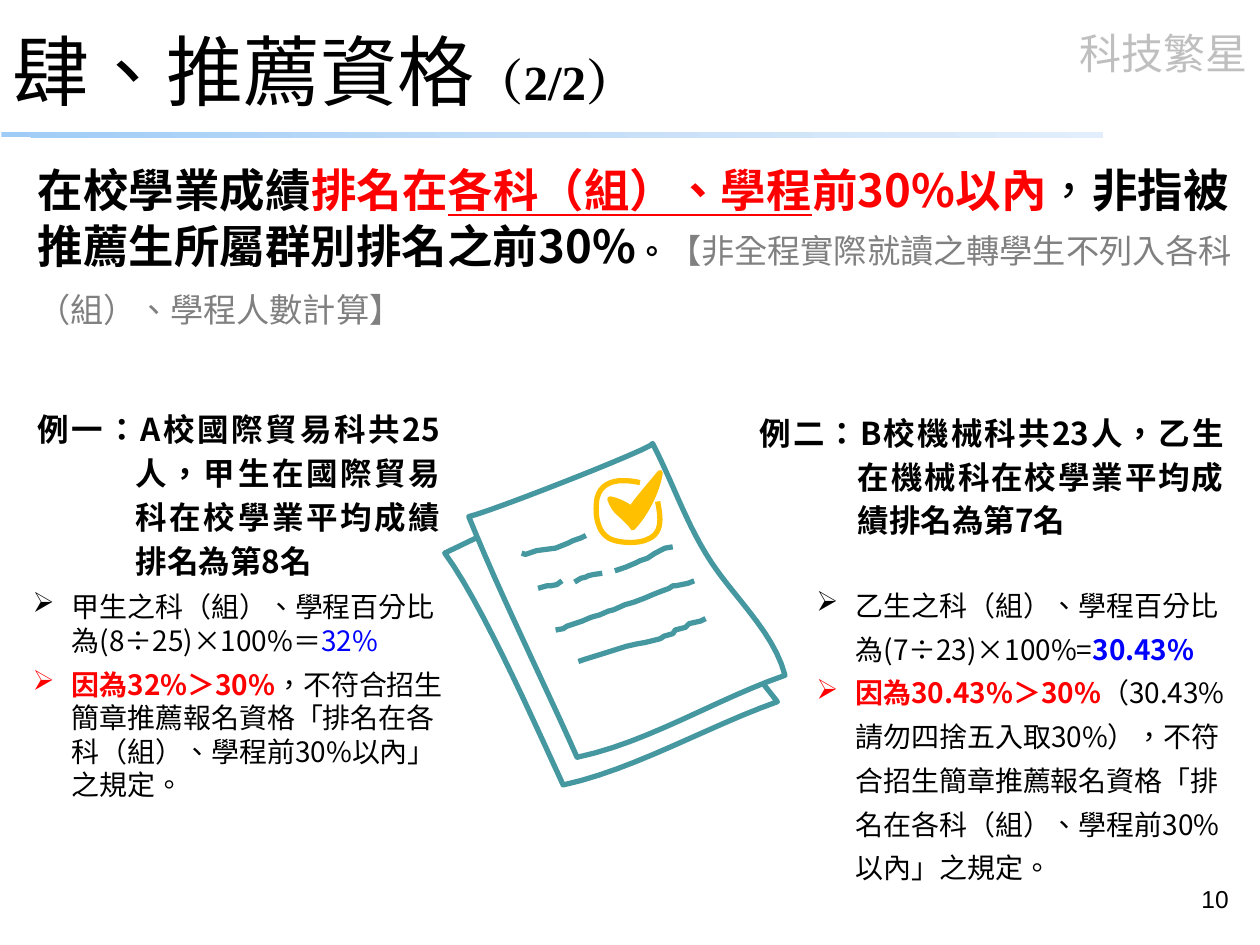
from copy import deepcopy
from itertools import chain

from lxml import etree
from pptx import Presentation
from pptx import util as u
from pptx.dml.color import RGBColor
from pptx.enum import shapes, text
from pptx.oxml.ns import qn

COLORS = {
    "black": "000000", "red": "FF0000", "blue": "0000FF", "gray": "808080",
    "pale": "BFBFBF", "teal": "4597A0", "gold": "FFC000",
    "rule_start": "9FCCF6", "rule_middle": "C4DEF8", "rule_end": "E2EEFB",
}
SANS = "Noto Sans CJK SC"
HEADING = "Noto Sans CJK JP"

# Sheet outlines and tick: a start point, then three points per Bézier curve.
# All drawing points are in hundredths of an inch from the drawing's corner.
FRONT_SHEET = [
    (168, 2), (170, 5), (37, 57), (22, 60), (48, 124), (80, 188), (108, 251),
    (165, 239), (218, 205), (273, 186), (264, 150), (228, 120), (210, 89),
    (193, 61), (183, 31), (168, 2)]
BACK_SHEET = [
    (28, 77), (28, 77), (3, 89), (3, 89), (31, 127), (68, 210), (97, 273),
    (153, 261), (213, 226), (267, 207), (267, 207), (256, 193), (256, 193)]
CHECK_BOX = [
    (158, 33), (144, 30), (128, 30), (124, 45), (122, 55), (123, 71), (133, 77),
    (140, 81), (156, 82), (164, 78), (177, 73), (174, 59), (172, 48)]
TICK = [
    (174, 25), (175, 24), (150, 53), (151, 54), (147, 50), (139, 47), (134, 46),
    (136, 51), (138, 55), (142, 58), (143, 59), (153, 68), (152, 69),
    (162, 59), (172, 40), (174, 25)]
WRITING = [
    [(64, 89), (67, 90), (76, 87), (91, 85), (101, 81), (105, 79), (111, 77), (115, 75)],
    [(77, 117), (84, 115), (87, 115), (92, 114), (96, 111)],
    [(106, 112), (111, 109), (115, 108), (117, 107), (121, 106), (128, 105)],
    [(138, 103), (147, 100), (154, 97), (158, 95), (164, 93), (170, 89), (176, 86),
     (178, 85), (184, 84)],
    [(91, 150), (97, 149), (100, 147), (106, 145), (112, 143), (119, 140), (126, 138),
     (133, 135), (137, 134), (146, 130), (153, 128), (161, 125), (168, 122),
     (173, 120), (181, 117), (184, 115), (186, 115), (196, 113), (201, 111)],
    [(109, 175), (115, 173), (128, 169), (147, 163), (156, 161), (162, 160), (174, 157),
     (177, 155), (184, 153), (186, 150), (194, 148), (197, 145), (206, 143), (210, 141)],
]


def rgb(name):
    return RGBColor.from_string(COLORS[name])


def add_runs(paragraph, runs, font=SANS, size=16):
    """Add (text, style) runs; style may hold color, bold, underline, size, font."""
    for words, style in runs:
        run = paragraph.add_run()
        run.text = words
        name = style.get("font", font)
        run.font.name = name
        run.font.size = u.Pt(style.get("size", size))
        run.font.bold = style.get("bold", False)
        run.font.underline = style.get("underline", False)
        run.font.color.rgb = rgb(style.get("color", "black"))
        properties = run._r.get_or_add_rPr()
        properties.set("lang", "zh-TW")
        properties.find(qn("a:latin")).addnext(
            etree.Element(qn("a:ea"), typeface=name))


def add_text_frame(slide, box, grow=True):
    frame = slide.shapes.add_textbox(*map(u.Cm, box)).text_frame
    frame.word_wrap = True
    if grow:
        frame.auto_size = text.MSO_AUTO_SIZE.SHAPE_TO_FIT_TEXT
    return frame


def hang(paragraph, indent):
    properties = paragraph._p.get_or_add_pPr()
    properties.set("marL", str(u.Cm(indent)))
    properties.set("indent", str(-u.Cm(indent)))
    return properties


def add_header(slide, box):
    """Title, section label and the fading rule below them."""
    left, top, width, height = box
    rule = slide.shapes.add_shape(shapes.MSO_SHAPE.RECTANGLE, u.Cm(left + 0.03),
                                  u.Cm(top + height - 0.1), u.Cm(22.2), u.Cm(0.1))
    rule.shadow.inherit = False
    rule.line.fill.background()
    rule.fill.gradient()
    rule.fill.gradient_angle = 45
    first = rule._element.spPr.find(".//" + qn("a:gs"))
    first.addnext(deepcopy(first))
    for stop, (name, position) in zip(rule.fill.gradient_stops, (
            ("rule_start", 0), ("rule_middle", 0.5), ("rule_end", 1))):
        stop.color.rgb = rgb(name)
        stop.position = position

    label = add_text_frame(slide, (left + width - 4.5, top + 0.43, 4.5, 1.27))
    label.paragraphs[0].alignment = text.PP_ALIGN.RIGHT
    add_runs(label.paragraphs[0], [("科技繁星", {"color": "pale"})], HEADING, 24)

    title = add_text_frame(slide, (left, top + 0.53, 22.86, 1.75), grow=False)
    title.vertical_anchor = text.MSO_ANCHOR.MIDDLE
    add_runs(title.paragraphs[0], [
        ("肆、推薦資格", {}),
        ("（2/2）", {"font": "Times New Roman", "size": 28, "bold": True})], HEADING, 44)


def add_rule_text(slide, box, runs):
    paragraph = add_text_frame(slide, box).paragraphs[0]
    paragraph.line_spacing = u.Pt(32)
    paragraph.space_after = u.Pt(3)
    add_runs(paragraph, runs, size=26)


def add_example(slide, box, words):
    paragraph = add_text_frame(slide, box).paragraphs[0]
    paragraph.alignment = text.PP_ALIGN.JUSTIFY
    paragraph.line_spacing = u.Pt(25)
    hang(paragraph, 1.98)
    add_runs(paragraph, [(words, {"bold": True})], size=18)


def add_bullets(slide, box, items, line_spacing=None, space_after=None):
    frame = add_text_frame(slide, box)
    for index, runs in enumerate(items):
        paragraph = frame.add_paragraph() if index else frame.paragraphs[0]
        paragraph.line_spacing = line_spacing
        paragraph.space_after = space_after
        etree.SubElement(hang(paragraph, 0.79), qn("a:buChar"), char="➢")
        add_runs(paragraph, runs)


def flatten(points, steps=12):
    """Turn a chain of cubic Bézier curves into many short straight steps."""
    def along(curve, t):
        weights = ((1 - t) ** 3, 3 * t * (1 - t) ** 2, 3 * t * t * (1 - t), t ** 3)
        return tuple(sum(w * p[axis] for w, p in zip(weights, curve)) for axis in (0, 1))

    curves = (points[i:i + 4] for i in range(0, len(points) - 1, 3))
    return [points[0], *chain.from_iterable(
        [along(curve, step / steps) for step in range(1, steps + 1)] for curve in curves)]


def add_outline(group, origin, points, color, closed=False, filled=False):
    unit = u.Cm(0.0254)
    placed = [(origin[0] + x * unit, origin[1] + y * unit) for x, y in points]
    builder = group.shapes.build_freeform(*placed[0], scale=1.0)
    builder.add_line_segments(placed[1:], close=closed)
    shape = builder.convert_to_shape()
    shape.shadow.inherit = False
    if filled:
        shape.fill.solid()
        shape.fill.fore_color.rgb = rgb(color)
    else:
        shape.fill.background()
    shape.line.color.rgb = rgb(color)
    shape.line.width = u.Pt(3)


def add_checked_papers(slide, corner):
    origin = tuple(map(u.Cm, corner))
    mark = slide.shapes.add_group_shape()
    add_outline(mark, origin, flatten(CHECK_BOX), "gold")
    add_outline(mark, origin, flatten(TICK), "gold", closed=True, filled=True)
    papers = slide.shapes.add_group_shape()
    add_outline(papers, origin, flatten(FRONT_SHEET), "teal", closed=True)
    add_outline(papers, origin, flatten(BACK_SHEET), "teal")
    for stroke in WRITING:
        add_outline(papers, origin, stroke, "teal")


def add_page_number(slide, box, number):
    paragraph = add_text_frame(slide, box, grow=False).paragraphs[0]
    paragraph.alignment = text.PP_ALIGN.RIGHT
    add_runs(paragraph, [(number, {})], "Arial", 14)


def main():
    presentation = Presentation()
    presentation.slide_width, presentation.slide_height = u.Cm(25.4), u.Cm(19.05)
    slide = presentation.slides.add_slide(presentation.slide_layouts[6])
    bold, red = {"bold": True}, {"bold": True, "color": "red"}

    add_header(slide, (0, 0, 25.4, 2.77))
    add_page_number(slide, (19.1, 17.7, 5.92, 1.32), "10")
    add_rule_text(slide, (0.51, 3.12, 24.59, 3.56), [
        ("在校學業成績", bold), ("排名在", red),
        ("各科（組）、學程", {**red, "underline": True}), ("前30%以內", red), ("，", {}),
        ("非指被推薦生所屬群別排名之前30%", bold), ("。", {"bold": True, "size": 18}),
        ("【非全程實際就讀之轉學生不列入各科（組）、學程人數計算】",
         {"color": "gray", "size": 19})])
    add_checked_papers(slide, (8.89, 8.89))
    add_example(slide, (0.51, 8.03, 8.61, 3.76),
                "例一：A校國際貿易科共25人，甲生在國際貿易科在校學業平均成績排名為第8名")
    add_example(slide, (15.06, 8.1, 9.86, 2.84),
                "例二：B校機械科共23人，乙生在機械科在校學業平均成績排名為第7名")
    add_bullets(slide, (0.41, 11.76, 8.79, 4.57), [
        [("甲生之科（組）、學程百分比為(8÷25)×100%＝", {}), ("32%", {"color": "blue"})],
        [("因為32%＞30%", red),
         ("，不符合招生簡章推薦報名資格「排名在各科（組）、學程前30%以內」之規定。", {})],
    ], space_after=u.Pt(6))
    add_bullets(slide, (16.21, 11.53, 9.04, 6.4), [
        [("乙生之科（組）、學程百分比為(7÷23)×100%=", {}),
         ("30.43%", {"bold": True, "color": "blue"})],
        [("因為30.43%＞30%", red),
         ("（30.43%請勿四捨五入取30%），不符合招生簡章推薦報名資格"
          "「排名在各科（組）、學程前30%以內」之規定。", {})],
    ], line_spacing=u.Pt(25))
    presentation.save("out.pptx")


if __name__ == "__main__":
    main()
